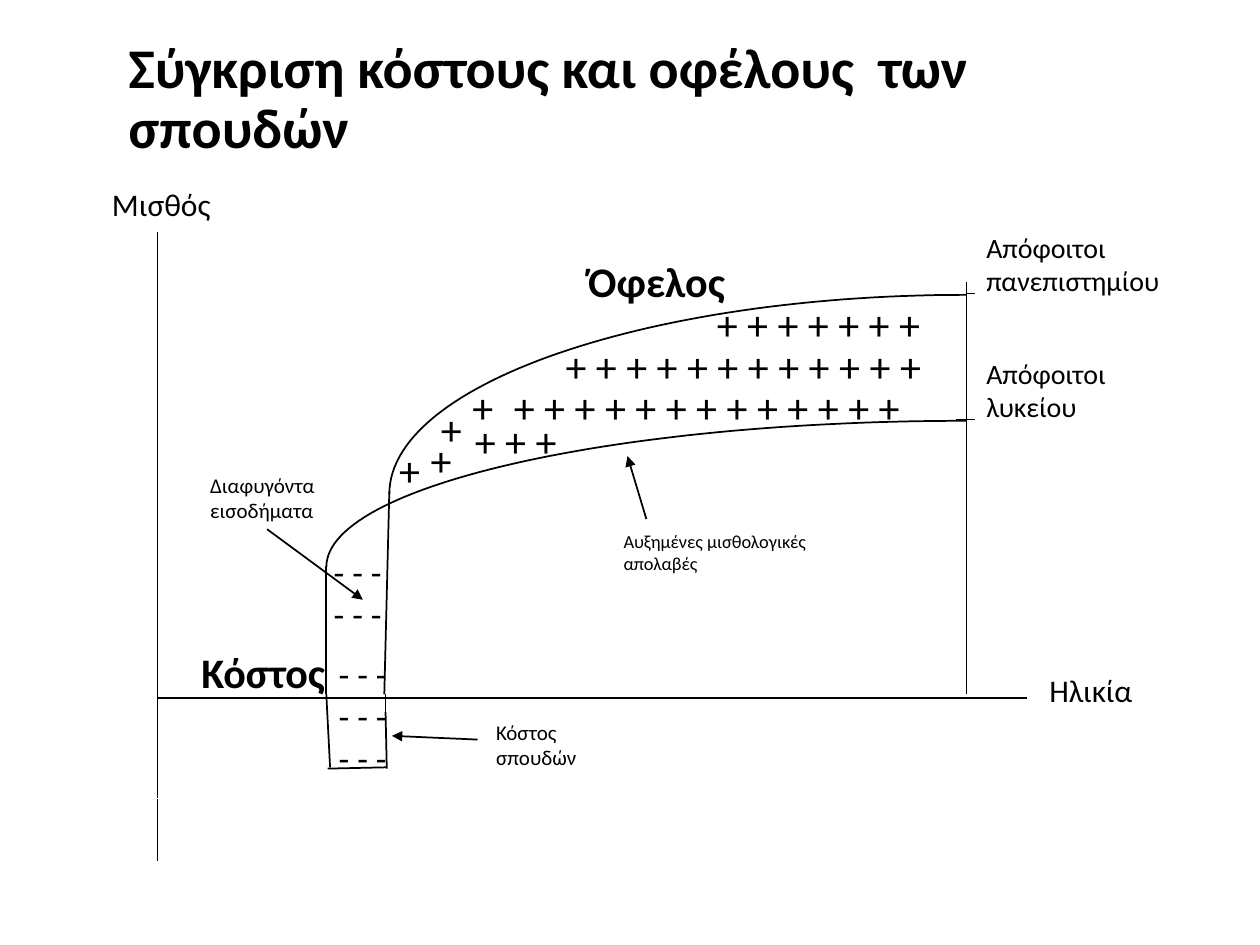
from dataclasses import dataclass
from typing import Any

from lxml.etree import SubElement
from pptx import Presentation
from pptx.dml.color import RGBColor
from pptx.enum.shapes import MSO_CONNECTOR as Connector
from pptx.enum.text import MSO_ANCHOR as Anchor
from pptx.enum.text import MSO_AUTO_SIZE as AutoSize
from pptx.enum.text import PP_ALIGN as Align
from pptx.oxml.ns import qn
from pptx.util import Inches, Pt

PX = Inches(1) // 100
BLACK = RGBColor(0, 0, 0)
CURVE_STEPS = 60


def set_format(target, values):
    for name, value in values.items():
        setattr(target, name, value)


def set_font(run, size, bold=False):
    set_format(run.font, {"name": "Calibri", "size": Pt(size), "bold": bold})
    run.font.color.rgb = BLACK


def set_line(line):
    line.width = Pt(1)
    line.color.rgb = BLACK


@dataclass
class Region:
    slide: Any
    left: int
    top: int

    def spot(self, x, y):
        return (self.left + x) * PX, (self.top + y) * PX

    def text(self, x, y, width, height, lines, size, bold=False, wrap=True):
        label = self.slide.shapes.add_textbox(*self.spot(x, y), width * PX, height * PX)
        frame = label.text_frame
        set_format(frame, {"word_wrap": wrap, "auto_size": AutoSize.SHAPE_TO_FIT_TEXT})
        frame.text = lines
        for paragraph in frame.paragraphs:
            set_font(paragraph.runs[0], size, bold)
        return label

    def stroke(self, x1, y1, x2, y2, arrow=False):
        stroke = self.slide.shapes.add_connector(
            Connector.STRAIGHT, *self.spot(x1, y1), *self.spot(x2, y2))
        set_line(stroke.line)
        properties = stroke._element.spPr
        if arrow:
            SubElement(properties.find(qn("a:ln")), qn("a:tailEnd"), type="triangle")
        SubElement(properties, qn("a:effectLst"))
        return stroke

    def wage_curve(self, x, y, controls):
        points = []
        for step in range(CURVE_STEPS + 1):
            t = step / CURVE_STEPS
            weights = ((1 - t) ** 3, 3 * t * (1 - t) ** 2, 3 * t * t * (1 - t), t ** 3)
            points.append(tuple(
                sum(w * c[axis] for w, c in zip(weights, controls)) * PX
                for axis in (0, 1)))
        builder = self.slide.shapes.build_freeform(*points[0])
        builder.add_line_segments(points[1:], close=False)
        curve = builder.convert_to_shape(*self.spot(x, y))
        curve.shadow.inherit = False
        curve.fill.background()
        set_line(curve.line)


def add_title(slide, left, top, width, height):
    title = slide.shapes.title
    set_format(title, {"left": left * PX, "top": top * PX,
                       "width": width * PX, "height": height * PX})
    title.text_frame.vertical_anchor = Anchor.MIDDLE
    title.text_frame.text = "Σύγκριση κόστους και οφέλους  των σπουδών"
    paragraph = title.text_frame.paragraphs[0]
    set_format(paragraph, {"alignment": Align.LEFT, "line_spacing": 0.9})
    set_font(paragraph.runs[0], 32, True)


def add_axes(region):
    for ends in ((0, 0, 0, 449), (0, 450, 0, 499), (0, 370, 690, 370)):
        region.stroke(*ends)
    region.text(-46, -42, 99, 40, "Μισθός", 18, wrap=False)
    region.text(698, 344, 87, 40, "Ηλικία", 18, wrap=False)


def add_wage_curves(region):
    region.wage_curve(50, 0, ((0, 158), (0, 71), (205, 0), (458, 0)))
    region.wage_curve(0, 100, ((0, 116), (0, 52), (227, 0), (508, 0)))
    for ends in ((508, 317, 508, -10), (508, -1, 515, -1), (500, 99, 515, 99)):
        region.stroke(*ends)
    region.text(514, -56, 193, 64, "Απόφοιτοι πανεπιστημίου", 16)
    region.text(514, 44, 174, 64, "Απόφοιτοι λυκείου", 16)


def add_benefit(region):
    rows = (
        (252, 34, 209, 7), (60, 127, 93, 3), (132, 67, 338, 12), (91, 100, 385, 13),
        (33, 117, 39, 1), (25, 142, 39, 1), (0, 150, 39, 1), (58, 100, 39, 1),
    )
    for x, y, width, count in rows:
        region.text(x, y, width, 50, " ".join("+" * count), 24, wrap=False)
    region.text(150, 0, 129, 50, "Όφελος", 24, True, False)
    region.text(178, 218, 165, 45, "Αυξημένες μισθολογικές απολαβές", 10.5)
    region.stroke(206, 214, 191, 164, arrow=True)


def add_cost(region):
    outline = (
        (102, 181, 102, 79), (148, 181, 152, 20), (149, 181, 149, 196),
        (149, 195, 150, 240), (102, 181, 105, 239), (150, 239, 103, 240),
    )
    for ends in outline:
        region.stroke(*ends)
    dashes = " ".join("---")
    region.text(98, 62, 85, 77, "\n".join([dashes] * 2), 20)
    region.text(102, 143, 70, 110, "\n".join([dashes] * 3), 20)
    region.text(-7, 138, 119, 50, "Κόστος", 24, True, False)
    lost_income = region.text(0, 0, 110, 50, "Διαφυγόντα εισοδήματα", 12)
    lost_arrow = region.stroke(55, 50, 131, 106, arrow=True)
    lost_arrow.begin_connect(lost_income, 2)
    region.text(227, 196, 86, 50, "Κόστος σπουδών", 12)
    region.stroke(222, 217, 154, 214, arrow=True)


def main():
    deck = Presentation()
    set_format(deck, {"slide_width": 1000 * PX, "slide_height": 750 * PX})
    slide = deck.slides.add_slide(deck.slide_layouts[5])
    add_title(slide, 92, 17, 850, 125)
    add_axes(Region(slide, 125, 184))
    add_wage_curves(Region(slide, 259, 234))
    add_benefit(Region(slide, 307, 198))
    add_cost(Region(slide, 157, 370))
    deck.save("out.pptx")


if __name__ == "__main__":
    main()
